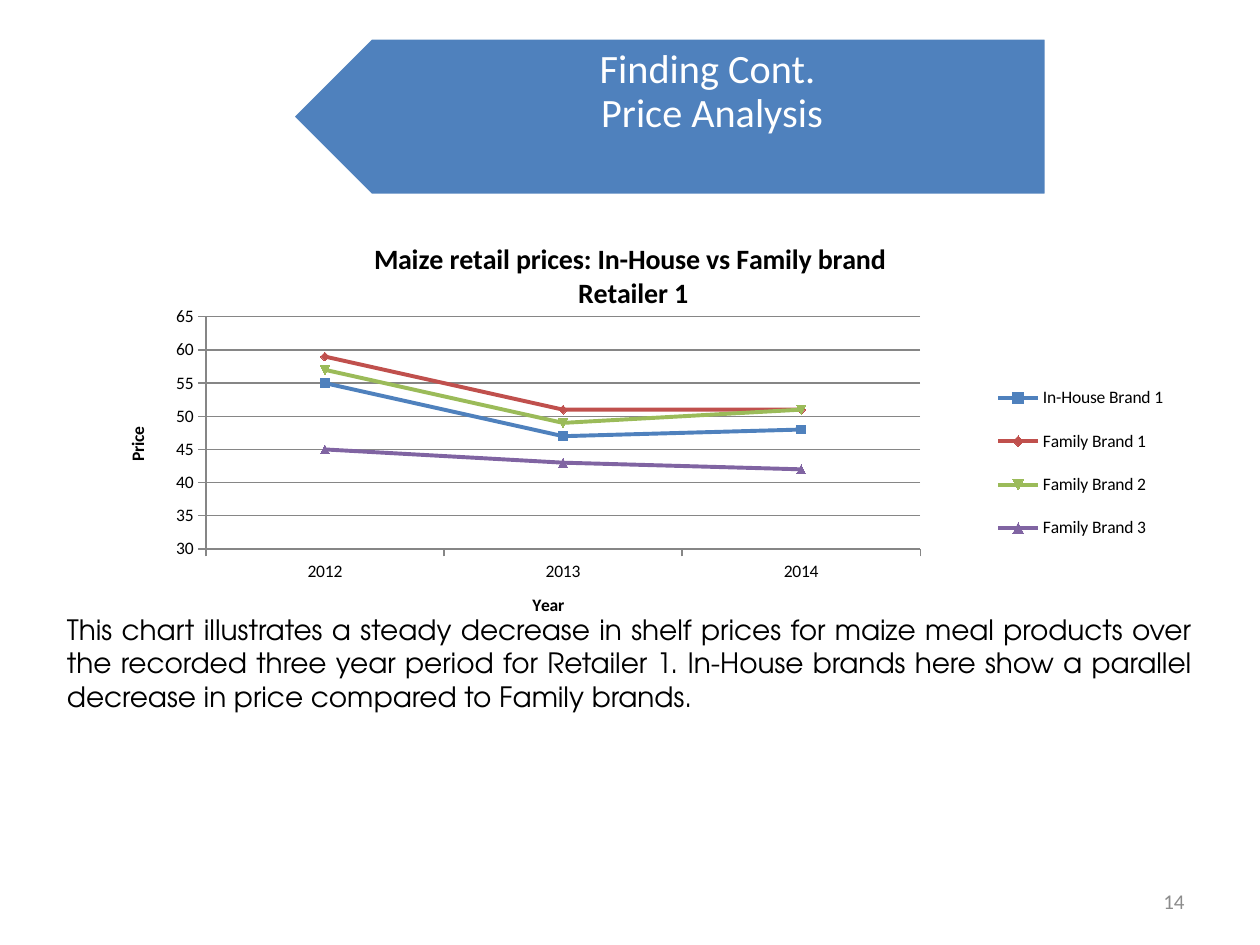
from dataclasses import dataclass

from pptx import Presentation
from pptx.chart.data import CategoryChartData
from pptx.dml.color import RGBColor
from pptx.enum.chart import XL_CHART_TYPE as ChartType
from pptx.enum.chart import XL_LEGEND_POSITION as LegendSide
from pptx.enum.chart import XL_TICK_MARK as Tick
from pptx.enum.shapes import MSO_SHAPE as Preset
from pptx.enum.text import MSO_ANCHOR as Anchor
from pptx.enum.text import PP_ALIGN as Align
from pptx.oxml import parse_xml
from pptx.oxml.ns import nsdecls, qn
from pptx.util import Pt


@dataclass(frozen=True)
class Theme:
    banner: str = "4F81BD"
    white: str = "FFFFFF"
    ink: str = "000000"
    muted: str = "8C8C8C"
    axis: str = "868686"
    series: tuple = ("4F81BD", "C0504D", "9BBB59", "8064A2")
    sans: str = "Calibri"
    body_font: str = "TeX Gyre Adventor"
    heading: float = 23
    body: float = 16
    footer: float = 12
    label: float = 10


def rgb(value):
    return RGBColor.from_string(value)


def place(element, x, y, w=None, h=None, inner=False):
    """Give a chart part a manual layout, in percent of the chart."""
    old = element.find(qn("c:layout"))
    if old is not None:
        element.remove(old)
    target = '<c:layoutTarget val="inner"/>' if inner else ""
    modes = '<c:xMode val="edge"/><c:yMode val="edge"/>'
    sizes = {"x": x, "y": y, "w": w, "h": h}
    values = "".join(f'<c:{key} val="{percent / 100:.3f}"/>'
                     for key, percent in sizes.items() if percent is not None)
    layout = parse_xml(f'<c:layout {nsdecls("c")}><c:manualLayout>{target}{modes}'
                       f'{values}</c:manualLayout></c:layout>')
    overlay = element.find(qn("c:overlay"))
    if overlay is not None:
        overlay.addprevious(layout)
    else:
        element.insert(0, layout)


class SlideBuilder:
    def __init__(self, page, theme):
        self.page = page
        self.theme = theme

    def style(self, font, size, color, name=None, bold=False):
        font.size = Pt(size)
        font.bold = bold
        font.name = name or self.theme.sans
        font.color.rgb = rgb(color)

    def banner(self, left, top, width, height):
        """Draw the pentagon banner pointing left."""
        shape = self.page.shapes.add_shape(
            Preset.PENTAGON, Pt(left), Pt(top), Pt(width), Pt(height))
        shape.rotation = 180
        shape.shadow.inherit = False
        shape.fill.solid()
        shape.fill.fore_color.rgb = rgb(self.theme.banner)
        shape.line.color.rgb = rgb(self.theme.white)
        shape.line.width = Pt(2)

    def text(self, area, lines, size, color, align, name=None,
             anchor=Anchor.MIDDLE, spacing=1.0, side_insets=(7.2, 7.2), inset=3.6):
        box = self.page.shapes.add_textbox(*map(Pt, area))
        frame = box.text_frame
        frame.word_wrap = True
        frame.vertical_anchor = anchor
        frame.margin_left, frame.margin_right = map(Pt, side_insets)
        frame.margin_top = frame.margin_bottom = Pt(inset)
        para = frame.paragraphs[0]
        para.alignment = align
        para.line_spacing = spacing
        for index, line in enumerate(lines):
            if index:
                para.add_line_break()
            span = para.add_run()
            span.text = line
            self.style(span.font, size, color, name)

    def chart_text(self, title, lines, size, x, y):
        frame = title.text_frame
        for index, line in enumerate(lines):
            para = frame.add_paragraph() if index else frame.paragraphs[0]
            span = para.add_run()
            span.text = line
            self.style(span.font, size, self.theme.ink, bold=True)
        place(title._element, x, y)

    def line_chart(self, area, categories, series):
        theme = self.theme
        data = CategoryChartData()
        data.categories = categories
        for name, values in series.items():
            data.add_series(name, values)
        chart = self.page.shapes.add_chart(
            ChartType.LINE_MARKERS, *map(Pt, area), data).chart
        self.style(chart.font, theme.label, theme.ink)

        plot = chart.plots[0]
        plot.vary_by_categories = False
        place(plot._element.getparent(), 12.6, 20.5, 63, 49.4, inner=True)
        for line, color in zip(plot.series, theme.series):
            line.smooth = False
            line.format.line.color.rgb = rgb(color)
            line.format.line.width = Pt(2.25)
            line.marker.size = 5
            line.marker.format.fill.solid()
            line.marker.format.fill.fore_color.rgb = rgb(color)
            line.marker.format.line.color.rgb = rgb(color)

        for axis in (chart.category_axis, chart.value_axis):
            axis.major_tick_mark = Tick.OUTSIDE
            axis.minor_tick_mark = Tick.NONE
            axis.format.line.color.rgb = rgb(theme.axis)
        prices = chart.value_axis
        prices.minimum_scale, prices.maximum_scale, prices.major_unit = 30, 65, 5
        prices.has_major_gridlines = True
        prices.major_gridlines.format.line.color.rgb = rgb(theme.axis)

        chart.has_legend = True
        chart.legend.position = LegendSide.RIGHT
        chart.legend.include_in_layout = False
        place(chart.legend._element, 81.5, 30.6, 16.5, 42)
        return chart


def main():
    theme = Theme()
    deck = Presentation()
    deck.slide_width, deck.slide_height = Pt(720), Pt(540)
    builder = SlideBuilder(deck.slides.add_slide(deck.slide_layouts[6]), theme)

    builder.banner(167, 21.6, 431, 90)
    builder.text((189.4, 21.6, 408.6, 90), ["Finding Cont. ", "Price Analysis"],
                 theme.heading, theme.white, Align.CENTER, anchor=Anchor.TOP,
                 spacing=0.9, side_insets=(39.6, 13), inset=6.3)
    builder.text((516.2, 500.4, 167.8, 28.8), ["14"],
                 theme.footer, theme.muted, Align.RIGHT)

    chart = builder.line_chart((36, 126, 648, 268.6), ["2012", "2013", "2014"], {
        "In-House Brand 1": (55, 47, 48),
        "Family Brand 1": (59, 51, 51),
        "Family Brand 2": (57, 49, 51),
        "Family Brand 3": (45, 43, 42),
    })
    chart.has_title = True
    chart.chart_title.include_in_layout = True
    builder.chart_text(chart.chart_title,
                       ["Maize retail prices: In-House vs Family brand", " Retailer 1"],
                       theme.body, 27.1, 3.5)
    builder.chart_text(chart.category_axis.axis_title, ["Year"], theme.label, 41.1, 78.8)
    builder.chart_text(chart.value_axis.axis_title, ["Price"], theme.label, 5.3, 43.2)

    builder.text((31.2, 345.9, 657.4, 65.5), [
        "This chart illustrates a steady decrease in shelf prices for maize meal "
        "products over the recorded three year period for Retailer 1. In-House brands "
        "here show a parallel decrease in price compared to Family brands."],
        theme.body, theme.ink, Align.JUSTIFY, name=theme.body_font)

    deck.save("out.pptx")


if __name__ == "__main__":
    main()
